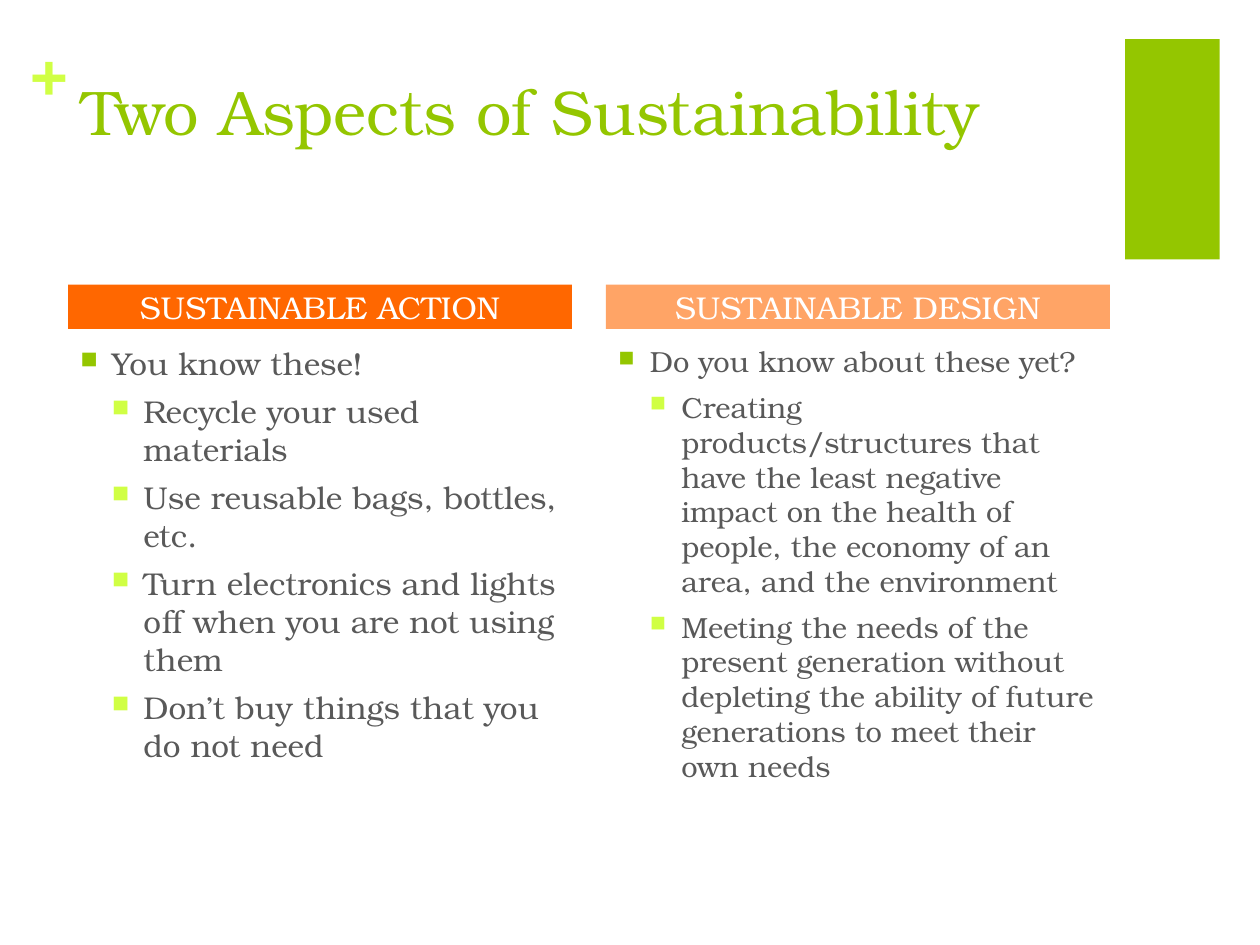
from dataclasses import dataclass

from lxml import etree
from pptx import Presentation
from pptx.dml.color import RGBColor
from pptx.enum.shapes import MSO_SHAPE
from pptx.enum.text import MSO_ANCHOR, PP_ALIGN
from pptx.oxml.ns import qn
from pptx.util import Inches, Pt

RECTANGLE = MSO_SHAPE.RECTANGLE
MIDDLE = MSO_ANCHOR.MIDDLE
LEFT, CENTER = PP_ALIGN.LEFT, PP_ALIGN.CENTER


@dataclass(frozen=True)
class Theme:
    font: str = "TeX Gyre Bonum"
    green: str = "94C600"
    lime: str = "D0FF44"
    orange: str = "FF6700"
    peach: str = "FFA466"
    gray: str = "595959"
    white: str = "FFFFFF"
    title_size: float = 36
    body_size: float = 18
    compact_size: float = 16.6


@dataclass(frozen=True)
class Column:
    left: float
    heading: str
    fill: str
    size: float
    lead: str
    points: tuple[str, ...]


THEME = Theme()
COLUMN_WIDTH = 4
HEADING_TOP, HEADING_HEIGHT = 2.26, 0.35
BODY_TOP, BODY_HEIGHT = 2.68, 4.02
INDENT = 0.25

COLUMNS = (
    Column(0.54, "SUSTAINABLE ACTION", THEME.orange, THEME.body_size, "You know these!", (
        "Recycle your used materials",
        "Use reusable bags, bottles, etc.",
        "Turn electronics and lights off when you are not using them",
        "Don’t buy things that you do not need",
    )),
    Column(4.81, "SUSTAINABLE DESIGN", THEME.peach, THEME.compact_size, "Do you know about these yet?", (
        "Creating products/structures that have the least negative impact on the health of "
        "people, the economy of an area, and the environment",
        "Meeting the needs of the present generation without depleting the ability of future "
        "generations to meet their own needs",
    )),
)


def write(para, text: str, *, size: float, color: str, bold: bool = False, align=LEFT) -> None:
    para.alignment = align
    span = para.add_run()
    span.text = text
    span.font.name = THEME.font
    span.font.size = Pt(size)
    span.font.bold = bold
    span.font.color.rgb = RGBColor.from_string(color)


def add_box(slide, left: float, top: float, width: float, height: float):
    box = slide.shapes.add_textbox(Inches(left), Inches(top), Inches(width), Inches(height))
    box.text_frame.word_wrap = True
    return box


def add_block(slide, left: float, top: float, width: float, height: float, fill: str):
    block = slide.shapes.add_shape(RECTANGLE, Inches(left), Inches(top), Inches(width), Inches(height))
    block.shadow.inherit = False
    block.fill.solid()
    block.fill.fore_color.rgb = RGBColor.from_string(fill)
    block.line.fill.background()
    return block


def add_bullet(para, level: int, color: str) -> None:
    para.level = level
    properties = para._p.get_or_add_pPr()
    properties.set("marL", str(Inches(INDENT * (level + 1))))
    properties.set("indent", str(-Inches(INDENT)))
    bullet_color = etree.SubElement(properties, qn("a:buClr"))
    etree.SubElement(bullet_color, qn("a:srgbClr"), val=color)
    etree.SubElement(properties, qn("a:buSzPct"), val="75000")
    etree.SubElement(properties, qn("a:buChar"), char="■")


def add_column(slide, column: Column) -> None:
    body = add_box(slide, column.left, BODY_TOP, COLUMN_WIDTH, BODY_HEIGHT).text_frame
    lead = body.paragraphs[0]
    add_bullet(lead, 0, THEME.green)
    write(lead, column.lead, size=column.size, color=THEME.gray)
    for point in column.points:
        para = body.add_paragraph()
        add_bullet(para, 1, THEME.lime)
        para.space_before = Pt(6)
        write(para, point, size=column.size, color=THEME.gray)

    heading = add_block(slide, column.left, HEADING_TOP, COLUMN_WIDTH, HEADING_HEIGHT, column.fill)
    frame = heading.text_frame
    frame.margin_top = frame.margin_bottom = 0
    frame.vertical_anchor = MIDDLE
    write(frame.paragraphs[0], column.heading, size=THEME.body_size, color=THEME.white, align=CENTER)


def main() -> None:
    deck = Presentation()
    deck.slide_width, deck.slide_height = Inches(10), Inches(7.5)
    slide = deck.slides.add_slide(deck.slide_layouts[6])

    add_block(slide, 8.93, 0.31, 0.75, 1.75, THEME.green)
    plus = add_box(slide, 0.24, 0.25, 0.29, 0.61).text_frame
    plus.margin_left = plus.margin_right = plus.margin_top = plus.margin_bottom = 0
    plus.word_wrap = False
    write(plus.paragraphs[0], "+", size=THEME.title_size, color=THEME.lime, bold=True)

    title = add_box(slide, 0.55, 0.53, 8.26, 1.22).text_frame
    write(title.paragraphs[0], "Two Aspects of Sustainability", size=THEME.title_size, color=THEME.green)

    for column in COLUMNS:
        add_column(slide, column)
    deck.save("out.pptx")


if __name__ == "__main__":
    main()
